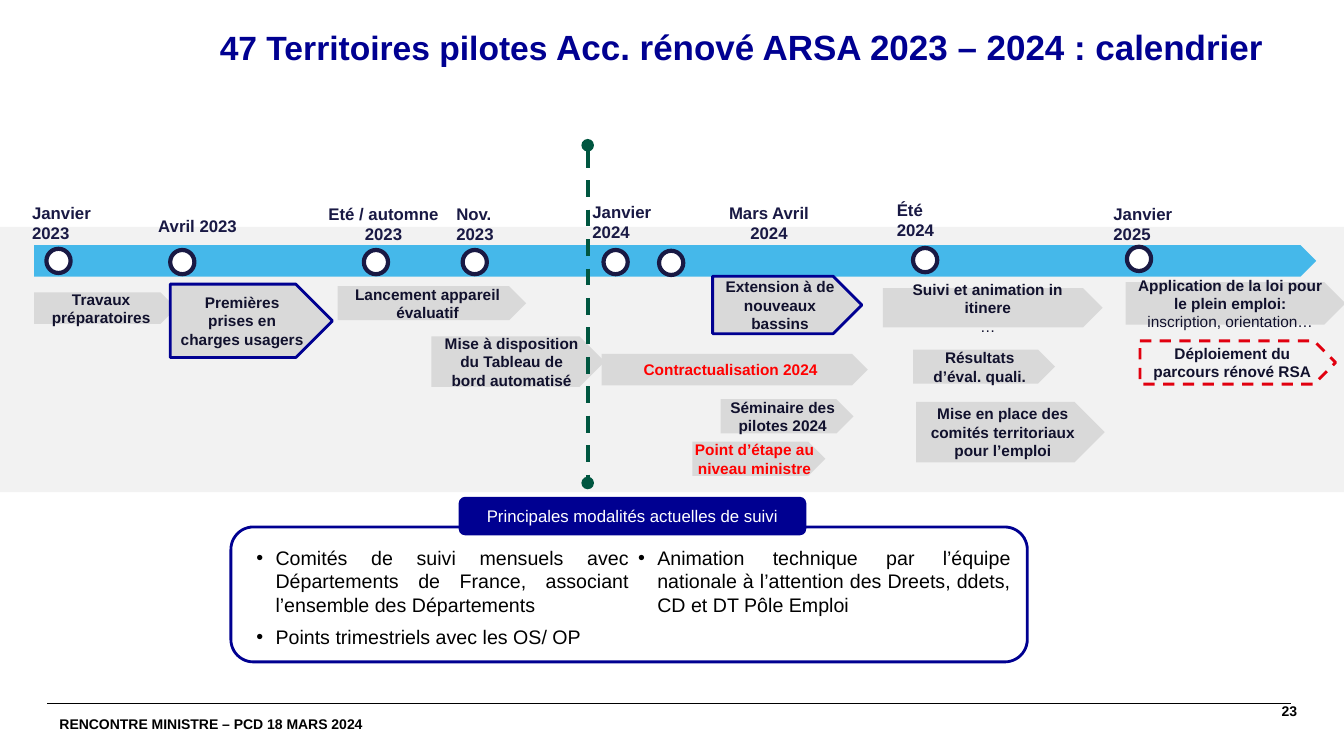
from lxml.etree import SubElement
from pptx import Presentation
from pptx.dml.color import RGBColor
from pptx.enum.dml import MSO_LINE_DASH_STYLE as Dash
from pptx.enum.shapes import MSO_CONNECTOR, MSO_SHAPE as Shape
from pptx.enum.text import MSO_ANCHOR as Anchor, PP_ALIGN as Align
from pptx.oxml.ns import qn
from pptx.util import Cm, Pt

BLACK = RGBColor(0x00, 0x00, 0x00)
WHITE = RGBColor(0xFF, 0xFF, 0xFF)
PALE_GREY = RGBColor(0xF2, 0xF2, 0xF2)
GREY = RGBColor(0xD9, 0xD9, 0xD9)
BLUE = RGBColor(0x00, 0x00, 0x91)
SKY = RGBColor(0x45, 0xB8, 0xEA)
NAVY = RGBColor(0x19, 0x19, 0x44)
INK = RGBColor(0x11, 0x11, 0x2D)
GREEN = RGBColor(0x00, 0x56, 0x40)
RED = RGBColor(0xFF, 0x00, 0x00)
DARK_RED = RGBColor(0xE1, 0x00, 0x0F)


class Timeline:
    """Style and drawing methods for one page."""

    font = "Arial"

    def __init__(self, page):
        self.page = page

    def style(self, span, size, color, bold=True):
        span.font.name = self.font
        span.font.size = Pt(size)
        span.font.bold = bold
        span.font.color.rgb = color

    def fill_text(self, shape, text, size, color, bold=True, align=Align.LEFT,
                  anchor=Anchor.MIDDLE, insets=(0.25, 0.13)):
        frame = shape.text_frame
        frame.word_wrap = True
        frame.vertical_anchor = anchor
        frame.margin_left = frame.margin_right = Cm(insets[0])
        frame.margin_top = frame.margin_bottom = Cm(insets[1])
        frame.text = text
        for para in frame.paragraphs:
            para.alignment = align
            for span in para.runs:
                self.style(span, size, color, bold)
        return frame

    def text(self, area, text, size, color, **options):
        box = self.page.shapes.add_textbox(*map(Cm, area))
        return self.fill_text(box, text, size, color, **options)

    def shape(self, kind, area, fill=None, line=None, width=2, dash=None):
        shape = self.page.shapes.add_shape(kind, *map(Cm, area))
        shape.shadow.inherit = False
        if fill is None:
            shape.fill.background()
        else:
            shape.fill.solid()
            shape.fill.fore_color.rgb = fill
        if line is None:
            shape.line.fill.background()
        else:
            shape.line.color.rgb = line
            shape.line.width = Pt(width)
            shape.line.dash_style = dash
        return shape

    def step(self, area, text, color=INK, detail=None, side=0.25, fill=GREY, **outline):
        plate = self.shape(Shape.PENTAGON, area, fill, **outline)
        frame = self.fill_text(plate, text, 11, color, align=Align.CENTER,
                               insets=(side, 0.13))
        if detail:
            span = frame.paragraphs[0].add_run()
            span.text = detail
            self.style(span, 11, color, bold=False)

    def line(self, start, end, color, width, dash=None, ends=None):
        line = self.page.shapes.add_connector(
            MSO_CONNECTOR.STRAIGHT, *map(Cm, start + end))
        line.line.color.rgb = color
        line.line.width = Pt(width)
        line.line.dash_style = dash
        props = line._element.spPr
        if ends:
            for tag in ("a:headEnd", "a:tailEnd"):
                SubElement(props.get_or_add_ln(), qn(tag), type=ends)
        SubElement(props, qn("a:effectLst"))

    def bullets(self, shape, items, size, color):
        """Justified list in two columns; each item is (text, space after)."""
        text = "\n".join(item for item, _ in items)
        frame = self.fill_text(shape, text, size, color, bold=False,
                               align=Align.JUSTIFY, anchor=Anchor.TOP)
        frame.margin_top = Cm(0.3)
        frame._txBody.bodyPr.set("numCol", "2")
        for para, (_, after) in zip(frame.paragraphs, items):
            para.space_after = Pt(after)
            props = para._p.get_or_add_pPr()
            props.set("marL", str(Cm(0.71)))
            props.set("indent", str(Cm(-0.48)))
            SubElement(props, qn("a:buFont"), typeface=self.font)
            SubElement(props, qn("a:buChar"), char="•")


def main():
    deck = Presentation()
    deck.slide_width, deck.slide_height = Cm(33.87), Cm(19.05)
    page = deck.slides.add_slide(deck.slide_layouts[6])
    art = Timeline(page)

    # Title
    title = art.text((5.54, 0.76, 28.3, 1.19), "47 Territoires pilotes", 24, BLUE,
                     anchor=Anchor.TOP, insets=(0, 0)).paragraphs[0]
    title.line_spacing = 0.9
    span = title.add_run()
    span.text = " Acc. rénové ARSA 2023 – 2024 : calendrier"
    art.style(span, 25, BLUE)

    # Band and time arrow
    art.shape(Shape.RECTANGLE, (0, 5.72, 33.87, 6.68), PALE_GREY)
    art.shape(Shape.PENTAGON, (0.86, 6.18, 32.31, 0.79), SKY)

    # Milestones
    dots = [(1.17, 6.27), (4.29, 6.3), (9.17, 6.3), (11.66, 6.3),
            (15.21, 6.3), (16.61, 6.32), (23.01, 6.25), (28.4, 6.22)]
    for left, top in dots:
        art.shape(Shape.OVAL, (left, top, 0.61, 0.61), WHITE, NAVY, 3)

    # Dates
    dates = [
        (0.56, 5.26, 3.4, "Janvier\v2023", Align.LEFT),
        (3.28, 5.33, 3.4, "Avril 2023", Align.CENTER),
        (7.72, 5.28, 3.89, "Eté / automne 2023", Align.CENTER),
        (11.25, 5.28, 3.4, "Nov.\v2023", Align.LEFT),
        (14.68, 5.23, 3.4, "Janvier\v2024", Align.LEFT),
        (17.78, 5.26, 3.2, "Mars Avril 2024", Align.CENTER),
        (22.35, 5.18, 2.82, "Été\v2024", Align.LEFT),
        (27.81, 5.28, 3.4, "Janvier\v2025", Align.LEFT),
    ]
    for left, top, width, date, align in dates:
        art.text((left, top, width, 0.71), date, 12, NAVY, align=align)

    # Steps
    art.step((0.86, 7.37, 3.58, 0.79), "Travaux préparatoires")
    art.step((4.29, 7.16, 4.09, 1.85), "Premières prises en charges usagers", line=BLUE)
    art.step((8.51, 7.21, 4.75, 0.86), "Lancement appareil évaluatif")
    art.step((10.87, 8.48, 4.37, 1.27),
             "Mise à disposition du Tableau de bord automatisé")
    art.step((15.16, 8.92, 6.71, 0.79), "Contractualisation 2024", RED)
    art.step((17.96, 6.96, 3.76, 1.45), "Extension à de nouveaux bassins", line=BLUE)
    art.step((18.16, 10.06, 3.35, 0.86), "Séminaire des pilotes 2024", side=0)
    art.step((17.45, 11.13, 3.35, 0.86), "Point d’étape au niveau ministre", RED, side=0)
    art.step((22.25, 7.26, 5.54, 0.99), "Suivi et animation in itinere\v", detail="…")
    art.step((23.01, 8.81, 3.58, 0.86), "Résultats\vd’éval. quali.")
    art.step((23.09, 10.13, 4.75, 1.52),
             "Mise en place des comités territoriaux pour l’emploi")
    art.step((28.37, 7.11, 5.54, 1.07), "Application de la loi pour le plein emploi: ",
             detail="inscription, orientation…")
    art.step((28.73, 8.59, 4.93, 1.09), "Déploiement du parcours rénové RSA",
             fill=None, line=DARK_RED, dash=Dash.DASH)

    # Year divider
    art.line((14.81, 3.66), (14.81, 12.17), GREEN, 3, Dash.DASH, "oval")

    # Follow-up panel
    panel = art.shape(Shape.ROUNDED_RECTANGLE, (5.82, 13.28, 20.07, 3.4), line=BLUE)
    art.bullets(panel, [
        ("Comités de suivi mensuels avec Départements de France, "
         "associant l’ensemble des Départements", 6),
        ("Points trimestriels avec les OS/ OP", 24),
        ("Animation technique par l’équipe nationale à l’attention des Dreets, "
         "ddets, CD et DT Pôle Emploi", 6),
    ], 14, BLACK)
    heading = art.shape(Shape.ROUNDED_RECTANGLE, (11.56, 12.52, 8.76, 0.97), BLUE)
    art.fill_text(heading, "Principales modalités actuelles de suivi", 12, WHITE,
                  bold=False, align=Align.CENTER)

    # Footer
    art.line((1.19, 17.73), (32.54, 17.73), BLACK, 0.8)
    art.text((1.17, 17.73, 8.76, 1.02), "RENCONTRE MINISTRE – PCD 18 MARS 2024",
             10, BLACK, insets=(0.33, 0.18))
    art.text((27.69, 17.25, 5, 1.32), "23", 10, BLACK, align=Align.RIGHT, insets=(0, 0))

    deck.save("out.pptx")


if __name__ == "__main__":
    main()
